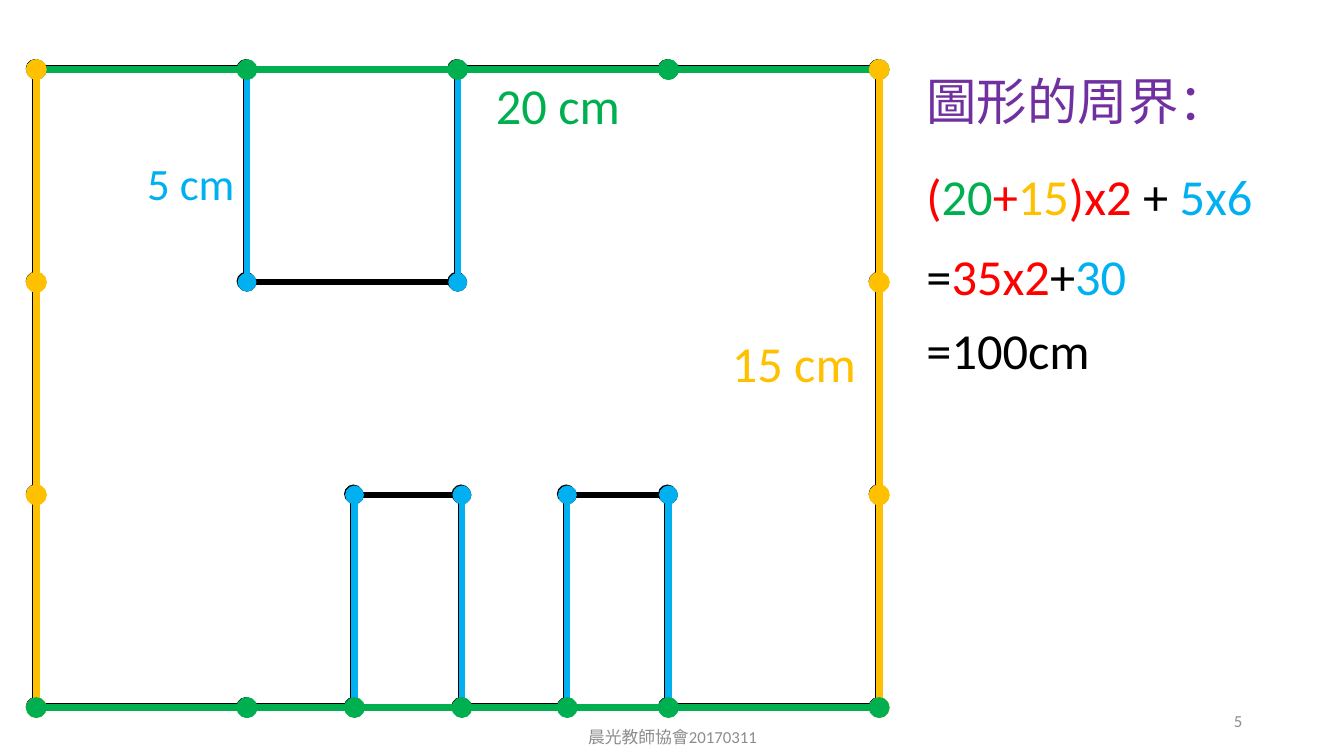
from dataclasses import dataclass
from itertools import pairwise

from lxml import etree
from pptx import Presentation
from pptx.dml.color import RGBColor
from pptx.enum.shapes import MSO_CONNECTOR
from pptx.enum.text import MSO_ANCHOR, MSO_AUTO_SIZE, PP_ALIGN
from pptx.oxml.ns import qn
from pptx.util import Inches, Pt

STRAIGHT = MSO_CONNECTOR.STRAIGHT
TOP, MIDDLE = MSO_ANCHOR.TOP, MSO_ANCHOR.MIDDLE
LEFT, CENTER, RIGHT = PP_ALIGN.LEFT, PP_ALIGN.CENTER, PP_ALIGN.RIGHT
GROW, FIXED = MSO_AUTO_SIZE.SHAPE_TO_FIT_TEXT, MSO_AUTO_SIZE.NONE


@dataclass(frozen=True)
class Theme:
    """Colours, type sizes and line widths of the slide."""
    font: str = "Calibri"
    black: str = "000000"
    green: str = "00B050"
    yellow: str = "FFC000"
    blue: str = "00B0F0"
    red: str = "FF0000"
    purple: str = "7030A0"
    grey: str = "8C8C8C"
    body: int = 36
    label: int = 32
    small: int = 12
    thin: float = 4.5
    thick: float = 5


T = Theme()
COLS, ROWS = 4, 3
TOP_STOPS = (0, 1, 2, 3, 4)
BOTTOM_STOPS = (0, 1, 1.51, 2.02, 2.52, 3, 4)
SIDE_STOPS = (0, 1, 2, 3)
NOTCH = (1, 2)
DOORS = ((1.51, 2.02), (2.52, 3))
OPENINGS = (NOTCH, *DOORS)


def add_text(s, box, runs, size, align=LEFT, anchor=TOP, fit=GROW):
    """Place one paragraph of (text, colour) runs in a box."""
    tf = s.shapes.add_textbox(*map(Inches, box)).text_frame
    tf.word_wrap = True
    tf.auto_size = fit
    tf.vertical_anchor = anchor
    p = tf.paragraphs[0]
    p.alignment = align
    p.font.name = T.font
    p.font.size = Pt(size)
    for text, color in runs:
        r = p.add_run()
        r.text = text
        r.font.color.rgb = RGBColor.from_string(color)


def add_stick(s, start, end, color, width):
    """Draw a line with a round dot at each end."""
    c = s.shapes.add_connector(STRAIGHT, *map(Inches, (*start, *end)))
    c.line.color.rgb = RGBColor.from_string(color)
    c.line.width = Pt(width)
    ln = c.line._get_or_add_ln()
    for tag in ("a:headEnd", "a:tailEnd"):
        etree.SubElement(ln, qn(tag), type="oval")
    etree.SubElement(c._element.spPr, qn("a:effectLst"))


def draw_figure(s, box):
    """Draw the black outline and the coloured perimeter on a grid."""
    left, top, width, height = box

    def stick(a, b, color, weight, shift=0):
        ends = [(left + x * width / COLS + shift, top + y * height / ROWS + shift)
                for x, y in (a, b)]
        add_stick(s, *ends, color, weight)

    def row(stops, y, color, weight, shift=0, skip=()):
        for a, b in pairwise(stops):
            if (a, b) not in skip:
                stick((a, y), (b, y), color, weight, shift)

    def sides(color, weight, shift=0):
        for x in (0, COLS):
            for a, b in pairwise(SIDE_STOPS):
                stick((x, b), (x, a), color, weight, shift)

    def walls(color, shift=0):
        for opening, y in ((NOTCH, 0), *((door, 2) for door in DOORS)):
            for x in opening:
                stick((x, y + 1), (x, y), color, T.thin, shift)

    row(TOP_STOPS, 0, T.black, T.thin, -0.01, OPENINGS)
    sides(T.black, T.thin, -0.01)
    row(BOTTOM_STOPS, ROWS, T.black, T.thin, -0.01, OPENINGS)
    walls(T.black, -0.01)
    row(NOTCH, 1, T.black, T.thin)
    for door in DOORS:
        row(door, 2, T.black, T.thin)

    walls(T.blue)
    row(TOP_STOPS, 0, T.green, T.thick, skip=OPENINGS)
    row(NOTCH, 0, T.green, T.thin)
    sides(T.yellow, T.thick)
    row(BOTTOM_STOPS, ROWS, T.green, T.thick, skip=OPENINGS)
    for door in DOORS:
        row(door, ROWS, T.green, T.thin)

    for dx, dy, w, h, text, color, size in (
            (4.46, 0, 2.69, 0.71, "20 cm", T.green, T.body),
            (6.8, 2.56, 2.05, 0.71, "15 cm", T.yellow, T.body),
            (1, 0.81, 1.11, 0.64, "5 cm", T.blue, T.label)):
        add_text(s, (left + dx, top + dy, w, h), [(text, color)], size)


def write_working(s, box):
    """Write the heading and the steps of the calculation."""
    left, top, width, height = box
    steps = (
        (0, [("圖形的周界：", T.purple)]),
        (0.94, [("(", T.red), ("20", T.green), ("+", T.red), ("15", T.yellow),
                (")x2 ", T.red), ("+ ", T.black), ("5x6", T.blue)]),
        (1.73, [("=", T.black), ("35x2", T.red), ("+", T.black), ("30", T.blue)]),
        (2.47, [("=100cm", T.black)]),
    )
    for dy, runs in steps:
        add_text(s, (left, top + dy, width, height), runs, T.body)


def write_footer(s, box):
    """Write the footer text and the page number."""
    left, top, width, height = box
    add_text(s, (left, top + 0.16, 4.5, height), [("晨光教師協會20170311", T.grey)],
             T.small, CENTER, MIDDLE, FIXED)
    add_text(s, (left + width - 3, top, 3, height), [("5", T.grey)],
             T.small, RIGHT, MIDDLE, FIXED)


def main():
    """Build the slide and save it."""
    prs = Presentation()
    prs.slide_width, prs.slide_height = Inches(13.33), Inches(7.5)
    s = prs.slides.add_slide(prs.slide_layouts[6])
    draw_figure(s, (0.36, 0.69, 8.36, 6.33))
    write_working(s, (9.09, 0.65, 4.03, 0.71))
    write_footer(s, (4.42, 6.95, 8, 0.4))
    prs.save("out.pptx")


if __name__ == "__main__":
    main()
